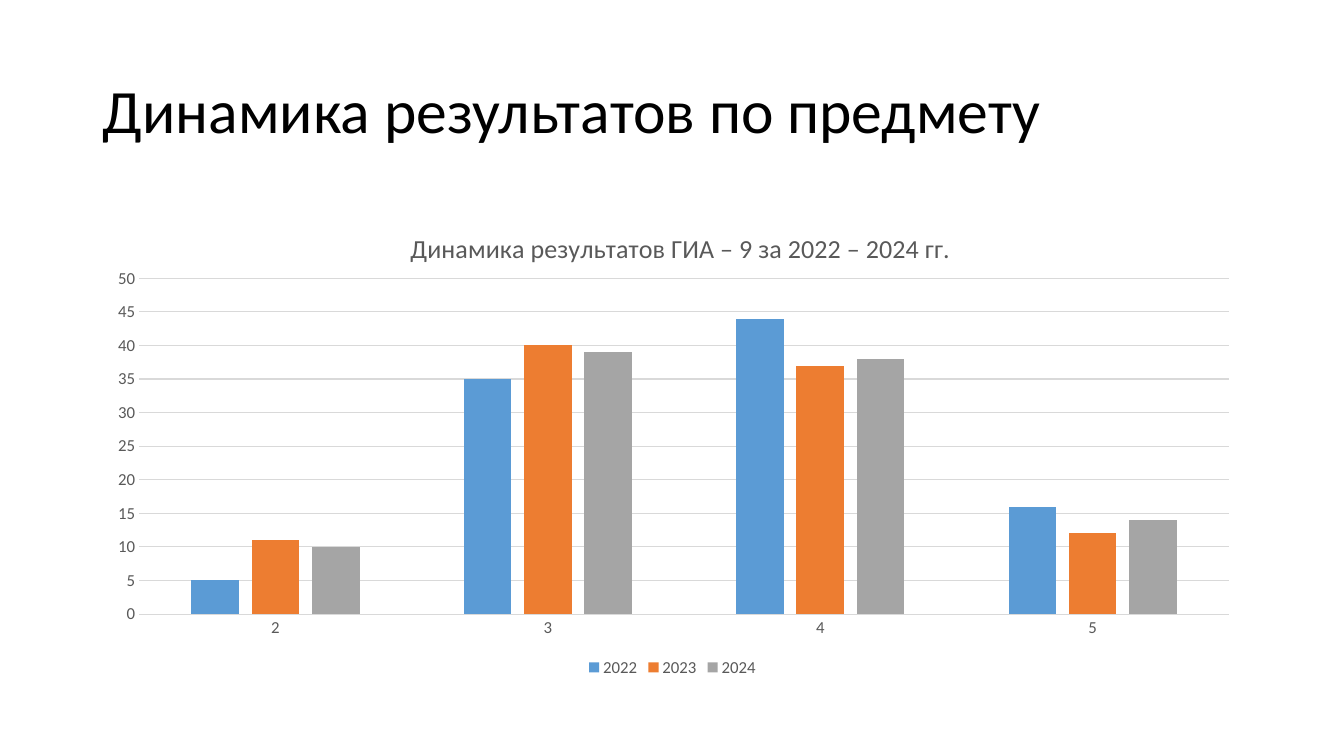
"""Build a slide with a clustered column chart of exam results by grade."""
import lxml.etree
import pptx
import pptx.chart.data
import pptx.dml.color
import pptx.enum.chart
import pptx.enum.text
import pptx.oxml.ns
import pptx.util

Inches = pptx.util.Inches
Pt = pptx.util.Pt
RGBColor = pptx.dml.color.RGBColor

HEADING = "Динамика результатов по предмету"
CHART_HEADING = "Динамика результатов ГИА – 9 за 2022 – 2024 гг."
GRADES = ["2", "3", "4", "5"]
BLACK = RGBColor(0x00, 0x00, 0x00)
GRAY = RGBColor(0x59, 0x59, 0x59)
PALE = RGBColor(0xD9, 0xD9, 0xD9)
YEARS = [
    ("2022", (5, 35, 44, 16), RGBColor(0x5B, 0x9B, 0xD5)),
    ("2023", (11, 40, 37, 12), RGBColor(0xED, 0x7D, 0x31)),
    ("2024", (10, 39, 38, 14), RGBColor(0xA5, 0xA5, 0xA5)),
]
HEADING_BOX = (0.92, 0.4, 11.5, 1.45)
CHART_BOX = (0.92, 2, 11.5, 4.76)
HEADING_PLACE = {"xMode": "edge", "yMode": "edge", "x": 0.27, "y": 0.05}
PLOT_PLACE = {"layoutTarget": "inner", "xMode": "edge", "yMode": "edge",
              "x": 0.04, "y": 0.16, "w": 0.94, "h": 0.7}


def style_font(font, size, color):
    """Set the typeface, size and colour of a font."""
    font.name = "Calibri"
    font.size = Pt(size)
    font.bold = False
    font.color.rgb = color


def write_text(frame, text, *, size, color, spacing=None):
    """Write one formatted paragraph into a text frame."""
    paragraph = frame.paragraphs[0]
    paragraph.line_spacing = spacing
    run = paragraph.add_run()
    run.text = text
    style_font(run.font, size, color)


def place(part, index, position):
    """Give a chart part a manual layout, as fractions of the chart."""
    qn = pptx.oxml.ns.qn
    for old in part.findall(qn("c:layout")):
        part.remove(old)
    layout = lxml.etree.Element(qn("c:layout"))
    manual = lxml.etree.SubElement(layout, qn("c:manualLayout"))
    for key, value in position.items():
        lxml.etree.SubElement(manual, qn("c:" + key)).set("val", str(value))
    part.insert(index, layout)


def draw_line(line):
    """Make a chart line thin and pale."""
    line.color.rgb = PALE
    line.width = Pt(0.75)


def add_results(slide):
    """Add the chart of results."""
    results = pptx.chart.data.CategoryChartData()
    results.categories = GRADES
    for year, shares, _ in YEARS:
        results.add_series(year, shares)
    chart = slide.shapes.add_chart(
        pptx.enum.chart.XL_CHART_TYPE.COLUMN_CLUSTERED,
        *map(Inches, CHART_BOX), results).chart
    style_font(chart.font, 12, GRAY)

    write_text(chart.chart_title.text_frame, CHART_HEADING, size=18.6, color=GRAY)
    chart.chart_title.include_in_layout = False
    place(chart.chart_title._element, 1, HEADING_PLACE)
    place(chart._chartSpace.chart.plotArea, 0, PLOT_PLACE)

    columns = chart.plots[0]
    columns.gap_width = 219
    columns.overlap = -27
    columns.vary_by_categories = False
    for series, (_, _, color) in zip(columns.series, YEARS):
        series.format.fill.solid()
        series.format.fill.fore_color.rgb = color

    for axis in (chart.category_axis, chart.value_axis):
        axis.major_tick_mark = pptx.enum.chart.XL_TICK_MARK.NONE
        axis.minor_tick_mark = pptx.enum.chart.XL_TICK_MARK.NONE
        style_font(axis.tick_labels.font, 12, GRAY)
    draw_line(chart.category_axis.format.line)
    chart.value_axis.format.line.fill.background()
    draw_line(chart.value_axis.major_gridlines.format.line)
    chart.value_axis.minimum_scale = 0
    chart.value_axis.maximum_scale = 50
    chart.value_axis.major_unit = 5

    chart.has_legend = True
    chart.legend.position = pptx.enum.chart.XL_LEGEND_POSITION.BOTTOM
    chart.legend.include_in_layout = False
    style_font(chart.legend.font, 12, GRAY)


def main():
    """Create and save the presentation."""
    deck = pptx.Presentation()
    deck.slide_width, deck.slide_height = Inches(13.33), Inches(7.5)
    slide = deck.slides.add_slide(deck.slide_layouts[5])
    heading = slide.shapes.title
    heading.left, heading.top, heading.width, heading.height = map(Inches, HEADING_BOX)
    heading.text_frame.vertical_anchor = pptx.enum.text.MSO_ANCHOR.MIDDLE
    write_text(heading.text_frame, HEADING, size=44, color=BLACK, spacing=0.9)
    heading.text_frame.paragraphs[0].alignment = pptx.enum.text.PP_ALIGN.LEFT
    add_results(slide)
    deck.save("out.pptx")


if __name__ == "__main__":
    main()
